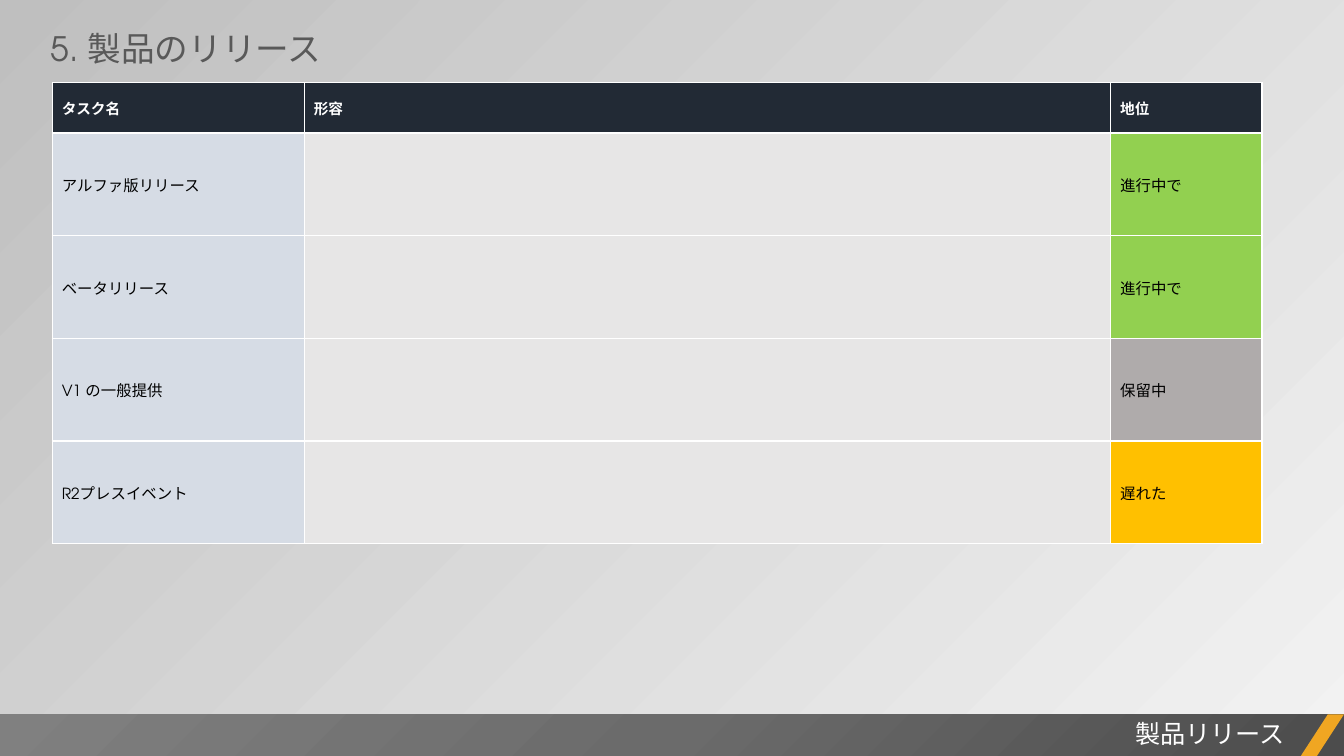
from pptx import Presentation
from pptx.dml.color import RGBColor
from pptx.enum.shapes import MSO_SHAPE as Preset
from pptx.enum.text import MSO_ANCHOR as Anchor, MSO_AUTO_SIZE as AutoSize, PP_ALIGN as Align
from pptx.oxml import parse_xml
from pptx.oxml.ns import nsdecls
from pptx.util import Pt

FONT = "TeX Gyre Adventor"
WHITE = RGBColor(0xFF, 0xFF, 0xFF)
BLACK = RGBColor(0, 0, 0)
TITLE_GRAY = RGBColor(0x59, 0x59, 0x59)
PALE_GRAY = RGBColor(0xF2, 0xF2, 0xF2)
MID_GRAY = RGBColor(0xBF, 0xBF, 0xBF)
BAR_STOPS = (
    (0, RGBColor(0x4C, 0x4C, 0x4C)),
    (50, RGBColor(0x6B, 0x6B, 0x6B)),
    (100, RGBColor(0x80, 0x80, 0x80)),
)
ORANGE = RGBColor(0xF0, 0xA6, 0x22)
NAVY = RGBColor(0x22, 0x2A, 0x35)
TASK_BLUE = RGBColor(0xD6, 0xDC, 0xE5)
DESCRIPTION_GRAY = RGBColor(0xE7, 0xE6, 0xE6)
STATUS_COLORS = {
    "進行中で": RGBColor(0x92, 0xD0, 0x50),
    "保留中": RGBColor(0xAF, 0xAB, 0xAB),
    "遅れた": RGBColor(0xFF, 0xC0, 0x00),
}
HEADERS = ("タスク名", "形容", "地位")
TASKS = (
    ("アルファ版リリース", "進行中で"),
    ("ベータリリース", "進行中で"),
    ("V1 の一般提供", "保留中"),
    ("R2プレスイベント", "遅れた"),
)
COLUMN_WIDTHS = (180, 576, 108)
HEADER_HEIGHT = 36


def write_text(frame, text, size=11, color=BLACK, bold=False, align=Align.LEFT):
    """Write one formatted run into a text frame."""
    paragraph = frame.paragraphs[0]
    paragraph.alignment = align
    run = paragraph.add_run()
    run.text = text
    run.font.name = FONT
    run.font.size = Pt(size)
    run.font.bold = bold
    run.font.color.rgb = color


def add_plain_shape(slide, preset, left, top, width, height, color):
    """Add a shape with a solid fill and neither outline nor shadow."""
    shape = slide.shapes.add_shape(preset, Pt(left), Pt(top), Pt(width), Pt(height))
    shape.shadow.inherit = False
    shape.line.fill.background()
    shape.fill.solid()
    shape.fill.fore_color.rgb = color
    return shape


def apply_radial_fill(shape, stops):
    """Fill a shape with a circular gradient centred on its lower right corner."""
    stop_xml = "".join(
        f'<a:gs pos="{position * 1000}"><a:srgbClr val="{color}"/></a:gs>'
        for position, color in stops
    )
    gradient = parse_xml(
        f'<a:gradFill {nsdecls("a")} rotWithShape="1"><a:gsLst>{stop_xml}</a:gsLst>'
        '<a:path path="circle"><a:fillToRect l="100000" t="100000"/></a:path></a:gradFill>'
    )
    properties = shape.element.spPr
    properties.replace(properties.solidFill, gradient)


def paint_background(slide):
    """Shade the slide from dark upper left to light lower right."""
    fill = slide.background.fill
    fill.gradient()
    fill.gradient_angle = 135
    for stop, color in zip(fill.gradient_stops, (PALE_GRAY, MID_GRAY)):
        stop.color.rgb = color


def add_footer(slide, left, top, width, height):
    """Add the footer bar with its slanted accent and section name."""
    bar = add_plain_shape(slide, Preset.RECTANGLE, left, top, width, height, BAR_STOPS[0][1])
    apply_radial_fill(bar, BAR_STOPS)
    accent_width = 31
    accent = add_plain_shape(slide, Preset.PARALLELOGRAM, left + width - accent_width, top,
                             accent_width, height, ORANGE)
    accent.adjustments[0] = 0.65
    label = slide.shapes.add_textbox(Pt(left + width - 582), Pt(top - 0.7), Pt(547), Pt(29))
    label.text_frame.word_wrap = True
    write_text(label.text_frame, "製品リリース", size=18, color=WHITE, align=Align.RIGHT)


def place_title(slide, left, top, width, height):
    """Move and format the title placeholder."""
    title = slide.shapes.title
    title.left, title.top, title.width, title.height = map(Pt, (left, top, width, height))
    frame = title.text_frame
    frame.word_wrap = False
    frame.auto_size = AutoSize.NONE
    frame.vertical_anchor = Anchor.MIDDLE
    write_text(frame, "5. 製品のリリース", size=24, color=TITLE_GRAY)


def fill_cell(cell, text, fill, **text_format):
    """Give a cell its fill, white borders, margins and text."""
    cell.fill.solid()
    cell.fill.fore_color.rgb = fill
    properties = cell._tc.get_or_add_tcPr()
    for index, side in enumerate("LRTB"):
        properties.insert(index, parse_xml(
            f'<a:ln{side} {nsdecls("a")} w="12700"><a:solidFill>'
            f'<a:srgbClr val="{WHITE}"/></a:solidFill></a:ln{side}>'
        ))
    cell.vertical_anchor = Anchor.MIDDLE
    cell.margin_left = Pt(6.75)
    cell.margin_right = cell.margin_top = Pt(0.7)
    cell.margin_bottom = Pt(0)
    if text:
        write_text(cell.text_frame, text, **text_format)


def add_task_table(slide, left, top, width, height):
    """Add the table of release tasks and their status."""
    table = slide.shapes.add_table(len(TASKS) + 1, len(HEADERS), Pt(left), Pt(top),
                                   Pt(width), Pt(height)).table
    table.horz_banding = False
    for column, column_width in zip(table.columns, COLUMN_WIDTHS):
        column.width = Pt(column_width)
    table.rows[0].height = Pt(HEADER_HEIGHT)
    for column, header in enumerate(HEADERS):
        fill_cell(table.cell(0, column), header, NAVY, size=10.5, color=WHITE, bold=True)
    for row, (task, status) in enumerate(TASKS, start=1):
        table.rows[row].height = Pt((height - HEADER_HEIGHT) / len(TASKS))
        fill_cell(table.cell(row, 0), task, TASK_BLUE)
        fill_cell(table.cell(row, 1), "", DESCRIPTION_GRAY)
        fill_cell(table.cell(row, 2), status, STATUS_COLORS[status])


def main():
    """Build and save the product release slide."""
    presentation = Presentation()
    presentation.slide_width, presentation.slide_height = Pt(960), Pt(540)
    slide = presentation.slides.add_slide(presentation.slide_layouts[5])
    paint_background(slide)
    add_footer(slide, 0, 510.3, 960, 30)
    place_title(slide, 28.8, 16.6, 257, 36)
    add_task_table(slide, 37.4, 59, sum(COLUMN_WIDTHS), 329.4)
    presentation.save("out.pptx")


if __name__ == "__main__":
    main()
